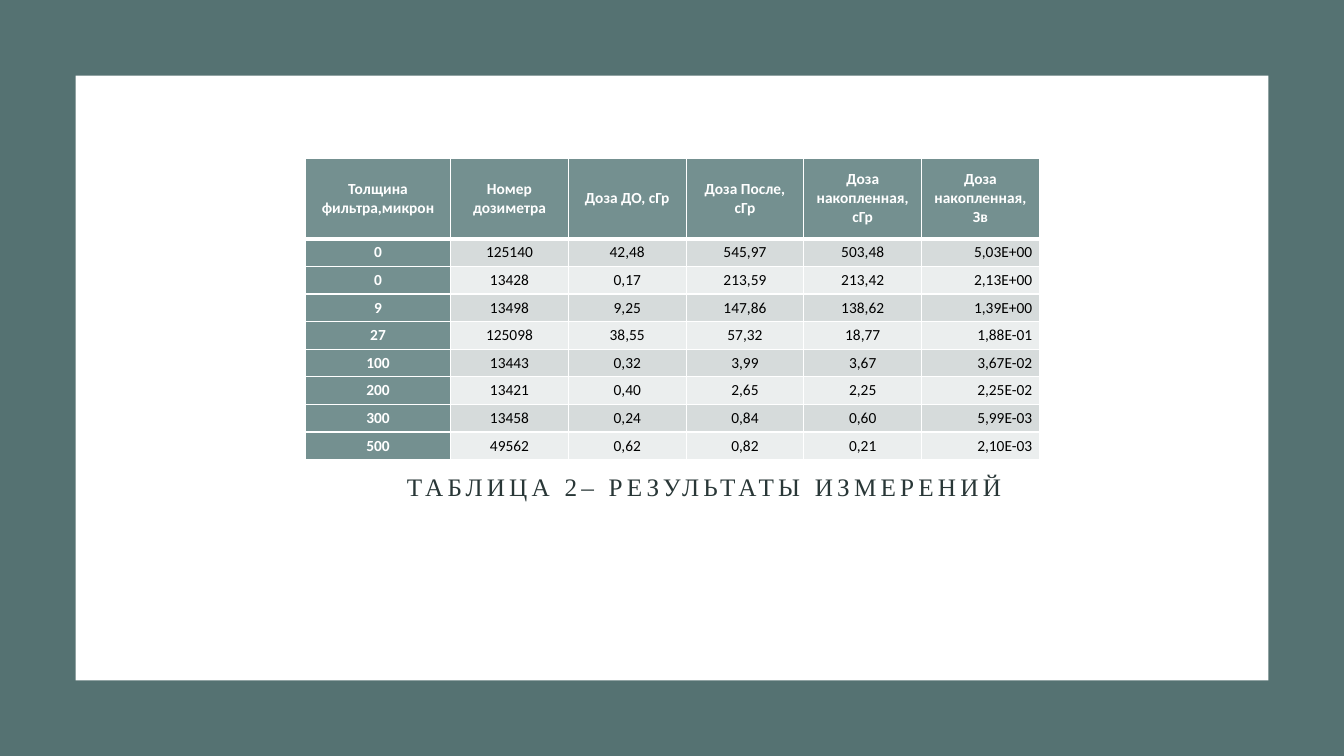
from lxml import etree
from pptx import Presentation
from pptx.dml.color import RGBColor
from pptx.enum.shapes import MSO_SHAPE
from pptx.enum.text import MSO_ANCHOR, MSO_AUTO_SIZE, PP_ALIGN
from pptx.oxml.ns import qn
from pptx.util import Inches, Pt

RECTANGLE = MSO_SHAPE.RECTANGLE
MIDDLE, BOTTOM = MSO_ANCHOR.MIDDLE, MSO_ANCHOR.BOTTOM
CENTER, RIGHT = PP_ALIGN.CENTER, PP_ALIGN.RIGHT
NO_AUTOFIT = MSO_AUTO_SIZE.NONE
TITLE_ONLY = 5

COLORS = {
    "frame": "557272",
    "panel": "FFFFFF",
    "caption": "293737",
    "header": "749090",
    "header_text": "FFFFFF",
    "odd_row": "D6DBDB",
    "even_row": "EBEEEE",
    "value": "000000",
    "border": "FFFFFF",
}

SLIDE_W, SLIDE_H = 13.33, 7.5
MARGIN = 0.75
TABLE_BOX = (3.03, 1.57, 7.28, 2.99)
CAPTION_BOX = (2.55, 4.56, 8.87, 0.47)
FIRST_COLUMN_W = 1.44
HEADER_H = 0.8

CAPTION = "ТАБЛИЦА 2– РЕЗУЛЬТАТЫ ИЗМЕРЕНИЙ"
MEASUREMENTS = [
    ["Толщина фильтра,микрон", "Номер дозиметра", "Доза ДО, сГр",
     "Доза После, сГр", "Доза накопленная, сГр", "Доза накопленная, Зв"],
    ["0", "125140", "42,48", "545,97", "503,48", "5,03E+00"],
    ["0", "13428", "0,17", "213,59", "213,42", "2,13E+00"],
    ["9", "13498", "9,25", "147,86", "138,62", "1,39E+00"],
    ["27", "125098", "38,55", "57,32", "18,77", "1,88E-01"],
    ["100", "13443", "0,32", "3,99", "3,67", "3,67E-02"],
    ["200", "13421", "0,40", "2,65", "2,25", "2,25E-02"],
    ["300", "13458", "0,24", "0,84", "0,60", "5,99E-03"],
    ["500", "49562", "0,62", "0,82", "0,21", "2,10E-03"],
]


def rgb(color):
    return RGBColor.from_string(COLORS[color])


def write(frame, text, *, size, font, color, bold=False, align=CENTER,
          line_spacing=None, space_after=None, tracking=None):
    paragraph = frame.paragraphs[0]
    paragraph.alignment = align
    paragraph.line_spacing = line_spacing
    paragraph.space_before = Pt(0)
    paragraph.space_after = space_after
    run = paragraph.add_run()
    run.text = text
    run.font.size = Pt(size)
    run.font.name = font
    run.font.bold = bold
    run.font.color.rgb = rgb(color)
    if tracking is not None:
        run.font._element.set("spc", str(tracking * 100))


def add_panel(slide, box, color):
    panel = slide.shapes.add_shape(RECTANGLE, *map(Inches, box))
    panel.shadow.inherit = False
    panel.fill.solid()
    panel.fill.fore_color.rgb = rgb(color)
    panel.line.fill.background()


def add_background(slide, box):
    left, top, width, height = box
    add_panel(slide, box, "frame")
    add_panel(slide, (left + MARGIN, top + MARGIN,
                      width - 2 * MARGIN, height - 2 * MARGIN), "panel")


def add_caption(slide, box):
    caption = slide.shapes.title
    caption.left, caption.top, caption.width, caption.height = map(Inches, box)
    # Bring the caption in front of the background
    caption.element.getparent().append(caption.element)
    frame = caption.text_frame
    frame.word_wrap = True
    frame.auto_size = NO_AUTOFIT
    frame.vertical_anchor = BOTTOM
    write(frame, CAPTION, size=18, font="Times New Roman", color="caption",
          line_spacing=0.9, space_after=Pt(6), tracking=3)


def set_borders(cell, **widths):
    properties = cell._tc.get_or_add_tcPr()
    for position, side in enumerate("LRTB"):
        line = etree.Element(qn(f"a:ln{side}"), w=str(Pt(widths.get(side, 1))))
        fill = etree.SubElement(line, qn("a:solidFill"))
        etree.SubElement(fill, qn("a:srgbClr"), val=COLORS["border"])
        properties.insert(position, line)


def format_cell(cell, text, row, column, last_column):
    is_header = row == 0 or column == 0
    band = "odd_row" if row % 2 else "even_row"
    cell.fill.solid()
    cell.fill.fore_color.rgb = rgb("header" if is_header else band)
    cell.vertical_anchor = MIDDLE
    cell.margin_left = cell.margin_right = Inches(0.07)
    cell.margin_top = cell.margin_bottom = 0
    write(cell.text_frame, text, size=11, font="Calibri", bold=is_header,
          color="header_text" if is_header else "value",
          align=RIGHT if row and column == last_column else CENTER)
    # A thick line parts the header from the values
    set_borders(cell, B=3 if row == 0 else 1, T=3 if row == 1 else 1)


def add_measurements(slide, box):
    width, height = box[2:]
    row_count, column_count = len(MEASUREMENTS), len(MEASUREMENTS[0])
    table = slide.shapes.add_table(
        row_count, column_count, *map(Inches, box)).table

    # The first row and column are larger, the rest share the space
    value_w = (width - FIRST_COLUMN_W) / (column_count - 1)
    value_h = (height - HEADER_H) / (row_count - 1)
    for index, column in enumerate(table.columns):
        column.width = Inches(value_w if index else FIRST_COLUMN_W)
    for index, row in enumerate(table.rows):
        row.height = Inches(value_h if index else HEADER_H)

    for row, values in enumerate(MEASUREMENTS):
        for column, text in enumerate(values):
            format_cell(table.cell(row, column), text, row, column,
                        column_count - 1)


def main():
    deck = Presentation()
    deck.slide_width, deck.slide_height = Inches(SLIDE_W), Inches(SLIDE_H)
    slide = deck.slides.add_slide(deck.slide_layouts[TITLE_ONLY])
    add_background(slide, (0, 0, SLIDE_W, SLIDE_H))
    add_caption(slide, CAPTION_BOX)
    add_measurements(slide, TABLE_BOX)
    deck.save("out.pptx")


if __name__ == "__main__":
    main()
